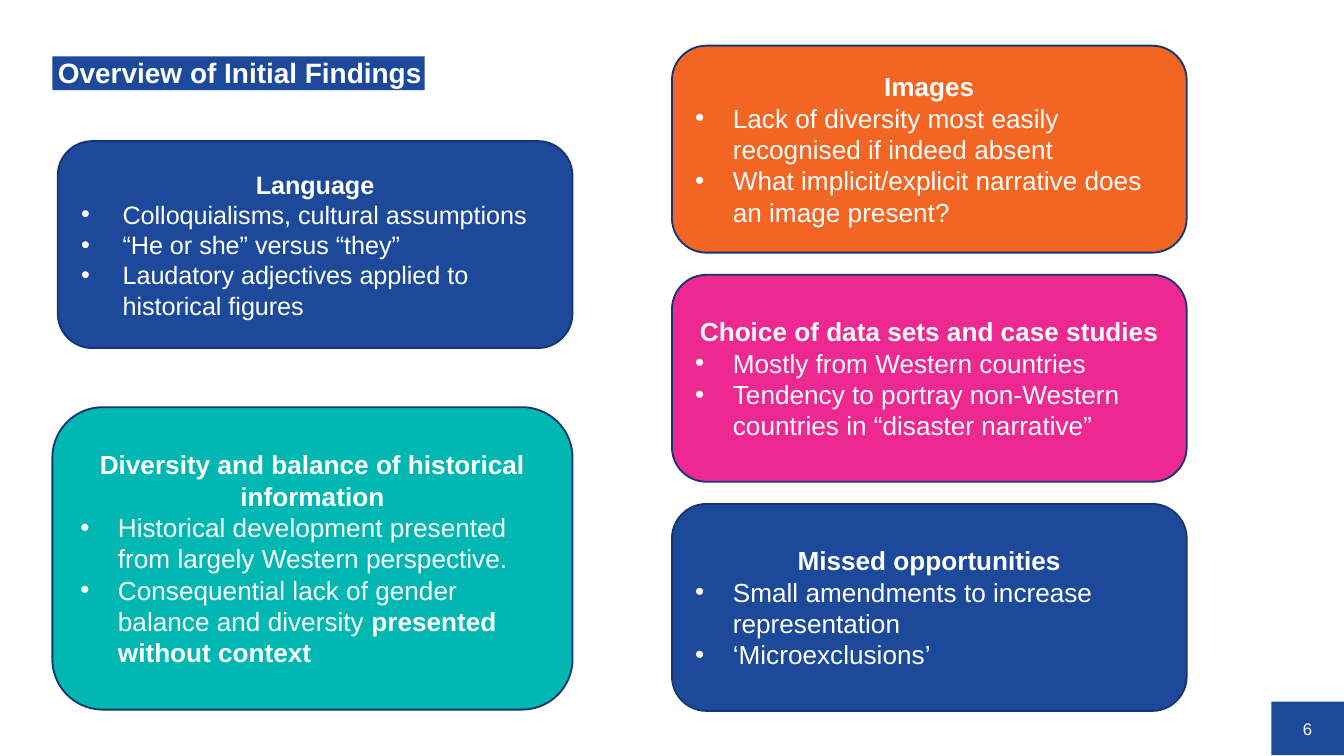
from pptx import Presentation
from pptx.dml.color import RGBColor
from pptx.enum.shapes import MSO_SHAPE
from pptx.enum.text import MSO_ANCHOR, MSO_AUTO_SIZE, PP_ALIGN
from pptx.oxml.ns import qn
from pptx.util import Pt
from lxml.etree import SubElement

PX = 9144
PAGE_WIDTH, PAGE_HEIGHT = 1000, 562.5
FONT = "Arial"
WHITE, BLUE, NAVY = "FFFFFF", "1D499B", "153673"
TEAL, PINK, ORANGE = "00B7B2", "ED2891", "F26522"
CARD_WIDTH, CARD_HEIGHT = 383, 154
RIGHT_LEFT, RIGHT_TOP, RIGHT_STEP = 500, 34, 170.5

LEFT_CARDS = [
    ((43, 105, CARD_WIDTH, CARD_HEIGHT), BLUE, 13.5, 31, "Language", [
        ("Colloquialisms, cultural assumptions", ""),
        ("“He or she” versus “they”", ""),
        ("Laudatory adjectives applied to historical figures", ""),
    ]),
    ((39, 303, 387, 225), TEAL, 14, 28,
     "Diversity and balance of historical information", [
         ("Historical development presented from largely Western perspective.", ""),
         ("Consequential lack of gender balance and diversity ",
          "presented without context"),
     ]),
]
RIGHT_CARDS = [
    (ORANGE, "Images", [
        ("Lack of diversity most easily recognised if indeed absent", ""),
        ("What implicit/explicit narrative does an image present?", ""),
    ]),
    (PINK, "Choice of data sets and case studies", [
        ("Mostly from Western countries", ""),
        ("Tendency to portray non-Western countries in “disaster narrative”", ""),
    ]),
    (BLUE, "Missed opportunities", [
        ("Small amendments to increase representation", ""),
        ("‘Microexclusions’", ""),
    ]),
]


def px(length):
    """Turn px into EMU."""
    return round(length * PX)


def color(value):
    """Turn a hex string into a colour."""
    return RGBColor.from_string(value)


def fill_shape(shape, value):
    """Give a shape a solid fill."""
    shape.fill.solid()
    shape.fill.fore_color.rgb = color(value)


def set_insets(frame, left, top, right, bottom):
    """Set the four text margins of a frame."""
    frame.margin_left, frame.margin_top = px(left), px(top)
    frame.margin_right, frame.margin_bottom = px(right), px(bottom)


def style_para(para, size, bold=False, align=PP_ALIGN.LEFT):
    """Set the white font and alignment of a paragraph."""
    para.alignment = align
    para.font.name = FONT
    para.font.size = Pt(size)
    para.font.bold = bold
    para.font.color.rgb = color(WHITE)


def add_bullet(para, indent):
    """Give a paragraph a hanging bullet."""
    properties = para._p.get_or_add_pPr()
    properties.set("marL", str(px(indent)))
    properties.set("indent", str(-px(indent)))
    SubElement(properties, qn("a:buFont")).set("typeface", FONT)
    SubElement(properties, qn("a:buChar")).set("char", "•")


def add_title(page, box, text):
    """Place the slide title on its blue strip."""
    title = page.shapes.title
    title.left, title.top, title.width, title.height = map(px, box)
    fill_shape(title, BLUE)
    frame = title.text_frame
    frame.text = text
    frame.word_wrap = False
    frame.auto_size = MSO_AUTO_SIZE.NONE
    frame.vertical_anchor = MSO_ANCHOR.MIDDLE
    set_insets(frame, 4, 2, 0, 0)
    para = frame.paragraphs[0]
    style_para(para, 15, bold=True)
    para.line_spacing = 0.9


def add_card(page, box, fill, size, indent, heading, bullets):
    """Place a rounded card with a heading and bullets."""
    card = page.shapes.add_shape(MSO_SHAPE.FLOWCHART_ALTERNATE_PROCESS, *map(px, box))
    card.shadow.inherit = False
    fill_shape(card, fill)
    card.line.color.rgb = color(NAVY)
    card.line.width = Pt(1)
    frame = card.text_frame
    frame.word_wrap = True
    frame.vertical_anchor = MSO_ANCHOR.MIDDLE
    frame.text = heading
    style_para(frame.paragraphs[0], size, bold=True, align=PP_ALIGN.CENTER)
    for text, emphasis in bullets:
        para = frame.add_paragraph()
        style_para(para, size)
        add_bullet(para, indent)
        para.add_run().text = text
        if emphasis:
            span = para.add_run()
            span.text = emphasis
            span.font.bold = True


def add_page_number(page, box, number):
    """Place the page number in its corner block."""
    block = page.shapes.add_shape(MSO_SHAPE.RECTANGLE, *map(px, box))
    block.shadow.inherit = False
    fill_shape(block, BLUE)
    block.line.fill.background()
    frame = block.text_frame
    frame.text = number
    frame.vertical_anchor = MSO_ANCHOR.MIDDLE
    set_insets(frame, 0, 0, 0, 0)
    style_para(frame.paragraphs[0], 9, align=PP_ALIGN.CENTER)


def main():
    """Build and save the deck."""
    deck = Presentation()
    deck.slide_width, deck.slide_height = px(PAGE_WIDTH), px(PAGE_HEIGHT)
    page = deck.slides.add_slide(deck.slide_layouts.get_by_name("Title Only"))
    add_page_number(page, (946, 522, 54, 40), "6")
    add_title(page, (39, 42, 277, 25), "Overview of Initial Findings")
    for card in LEFT_CARDS:
        add_card(page, *card)
    for row, (fill, heading, bullets) in enumerate(RIGHT_CARDS):
        box = (RIGHT_LEFT, RIGHT_TOP + row * RIGHT_STEP, CARD_WIDTH, CARD_HEIGHT)
        add_card(page, box, fill, 14, 28, heading, bullets)
    deck.save("out.pptx")


if __name__ == "__main__":
    main()
